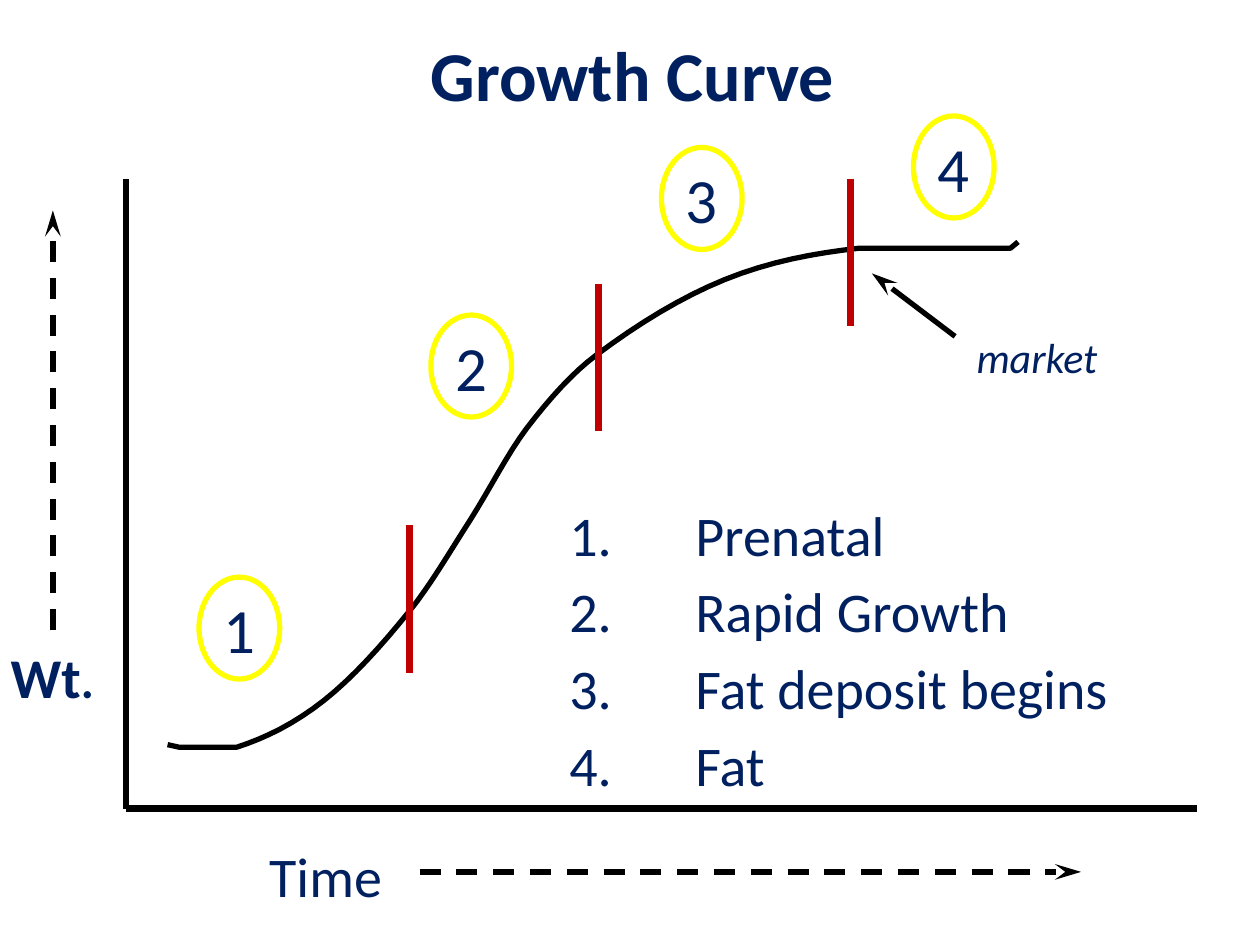
from collections import namedtuple
from lxml import etree
from pptx import Presentation
from pptx.dml.color import RGBColor
from pptx.enum.dml import MSO_LINE
from pptx.enum.shapes import MSO_CONNECTOR, MSO_SHAPE
from pptx.enum.text import MSO_ANCHOR, MSO_AUTO_SIZE, PP_ALIGN
from pptx.oxml.ns import qn
from pptx.util import Inches, Pt

NAVY, BLACK, RED, YELLOW = "002060", "000000", "C00000", "FFFF00"
Box = namedtuple("Box", "left top width height")

# Positions on the chart are inches right of and above the origin of the axes.
# A phase has a name, the corner of its number and the top of its end divider.
Phase = namedtuple("Phase", "name number_corner divider_top")
PHASES = [
    Phase("Prenatal", (0.58, 1.84), (2.25, 2.25)),
    Phase("Rapid Growth", (2.42, 3.92), (3.75, 4.17)),
    Phase("Fat deposit begins", (4.25, 5.25), (5.75, 5)),
    Phase("Fat", (6.25, 5.5), None),
]
# The curve is smooth between its knots, with a short straight tick at each end
FIRST_TICK, LAST_TICK = (0.33, 0.51), (7.08, 4.5)
KNOTS = [(0.42, 0.49), (0.88, 0.49), (1.57, 0.86), (2.25, 1.57), (2.73, 2.29),
         (3.18, 3.02), (3.73, 3.6), (4.75, 4.2), (5.82, 4.45), (7.02, 4.45)]
STEPS_PER_KNOT = 8

DIVIDER_HEIGHT = 1.17
NUMBER_WIDTH, NUMBER_HEIGHT = 0.64, 0.81
LABEL_HEIGHT = 0.64
LEGEND_PITCH = 0.61


def color(hex_value):
    return RGBColor.from_string(hex_value)


def format_text(frame, size, align=PP_ALIGN.CENTER, bold=False, italic=False):
    frame.word_wrap = False
    for paragraph in frame.paragraphs:
        paragraph.alignment = align
        for run in paragraph.runs:
            font = run.font
            font.name, font.size = "Calibri", Pt(size)
            font.bold, font.italic = bold, italic
            font.color.rgb = color(NAVY)


def add_label(slide, text, box, size=32, **style):
    label = slide.shapes.add_textbox(*(Inches(value) for value in box))
    label.text_frame.text = text
    format_text(label.text_frame, size, **style)
    return label


def add_line(slide, start, end, width, hex_value=BLACK, dashed=False, arrow=False):
    connector = slide.shapes.add_connector(
        MSO_CONNECTOR.STRAIGHT, *(Inches(value) for value in (*start, *end)))
    line = connector.line
    line.color.rgb, line.width = color(hex_value), Pt(width)
    if dashed:
        line.dash_style = MSO_LINE.DASH
    if arrow:
        etree.SubElement(line._get_or_add_ln(), qn("a:tailEnd"),
                         type="stealth", w="med", len="lg")
    etree.SubElement(connector._element.spPr, qn("a:effectLst"))


def style_outline(shape, hex_value):
    shape.shadow.inherit = False
    shape.fill.background()
    shape.line.color.rgb, shape.line.width = color(hex_value), Pt(3)


def slope(start, end):
    return (end[1] - start[1]) / (end[0] - start[0])


def smooth_points(knots):
    """Cubic Hermite curve whose slope at a knot is that between its neighbours."""
    points = [knots[0]]
    for before, start, end, after in zip(knots, knots[1:], knots[2:], knots[3:]):
        run = end[0] - start[0]
        start_slope, end_slope = slope(before, end), slope(start, after)
        for step in range(STEPS_PER_KNOT + 1):
            t = step / STEPS_PER_KNOT
            rise = t * t * (3 - 2 * t)
            bend = t * (1 - t) * ((1 - t) * start_slope - t * end_slope)
            y = start[1] + rise * (end[1] - start[1]) + run * bend
            points.append((start[0] + t * run, y))
    return points + [knots[-1]]


def add_title(slide, box):
    title = slide.shapes.title
    title.left, title.top, title.width, title.height = (Inches(v) for v in box)
    title.text_frame.text = "Growth Curve"
    title.text_frame.auto_size = MSO_AUTO_SIZE.NONE
    format_text(title.text_frame, 40, bold=True)


def add_axes(slide, box):
    left, top = box.left, box.top
    right, bottom = left + box.width, top + box.height
    add_line(slide, (left, top), (left, bottom), 4)
    add_line(slide, (right, bottom), (left, bottom), 4)

    # Time runs along the bottom
    time_y = bottom + 0.5
    add_label(slide, "Time", Box(left + 1.02, bottom + 0.21, 1.13, LABEL_HEIGHT))
    add_line(slide, (left + 2.33, time_y), (right - 0.92, time_y), 3,
             dashed=True, arrow=True)

    # Weight runs up the left side
    weight_x = left - 0.58
    weight = add_label(slide, "Wt", Box(left - 1.02, bottom - 1.37, 0.87, LABEL_HEIGHT))
    weight.text_frame.paragraphs[0].add_run().text = "."
    format_text(weight.text_frame, 32, bold=True)
    weight.text_frame.paragraphs[0].runs[1].font.size = Pt(28)
    add_line(slide, (weight_x, bottom - 1.42), (weight_x, top + 0.25), 3,
             dashed=True, arrow=True)


def add_growth_curve(slide, box):
    def place(point):
        return box.left + point[0], box.top + box.height - point[1]

    path_points = [FIRST_TICK, *smooth_points(KNOTS), LAST_TICK]
    start, *rest = [tuple(Inches(v) for v in place(p)) for p in path_points]
    builder = slide.shapes.build_freeform(*start)
    builder.add_line_segments(rest, close=False)
    style_outline(builder.convert_to_shape(), BLACK)

    # Dividers between phases
    for phase in PHASES[:-1]:
        x, y = place(phase.divider_top)
        add_line(slide, (x, y), (x, y + DIVIDER_HEIGHT), 4.5, RED)

    # Circled phase numbers
    for number, phase in enumerate(PHASES, 1):
        corner = place(phase.number_corner)
        circle = slide.shapes.add_shape(
            MSO_SHAPE.OVAL,
            *(Inches(v) for v in (*corner, NUMBER_WIDTH, NUMBER_HEIGHT)))
        style_outline(circle, YELLOW)
        circle.text_frame.text = str(number)
        circle.text_frame.vertical_anchor = MSO_ANCHOR.MIDDLE
        format_text(circle.text_frame, 36)

    # Market point
    add_line(slide, place((6.58, 3.75)), place((5.92, 4.25)), 3, arrow=True)
    add_label(slide, "market", Box(*place((6.63, 3.84)), 1.2, 0.51), 24, italic=True)


def add_legend(slide, box):
    for row, phase in enumerate(PHASES):
        row_box = Box(box.left, box.top + row * LEGEND_PITCH, box.width, LABEL_HEIGHT)
        entry = add_label(slide, f"{row + 1}.\t{phase.name}", row_box,
                          align=PP_ALIGN.LEFT)
        # Names start at a tab stop one inch in
        properties = entry.text_frame.paragraphs[0]._p.get_or_add_pPr()
        tab_stops = etree.SubElement(properties, qn("a:tabLst"))
        etree.SubElement(tab_stops, qn("a:tab"), pos=str(Inches(1)), algn="l")


def main():
    prs = Presentation()
    prs.slide_width, prs.slide_height = Inches(10), Inches(7.5)
    slide = prs.slides.add_slide(prs.slide_layouts[5])
    chart_box = Box(1, 1.42, 8.5, 5)
    add_title(slide, Box(3.3, 0.2, 3.44, 0.77))
    add_axes(slide, chart_box)
    add_growth_curve(slide, chart_box)
    add_legend(slide, Box(4.42, 3.92, 4.59, 2.47))
    prs.save("out.pptx")


if __name__ == "__main__":
    main()
